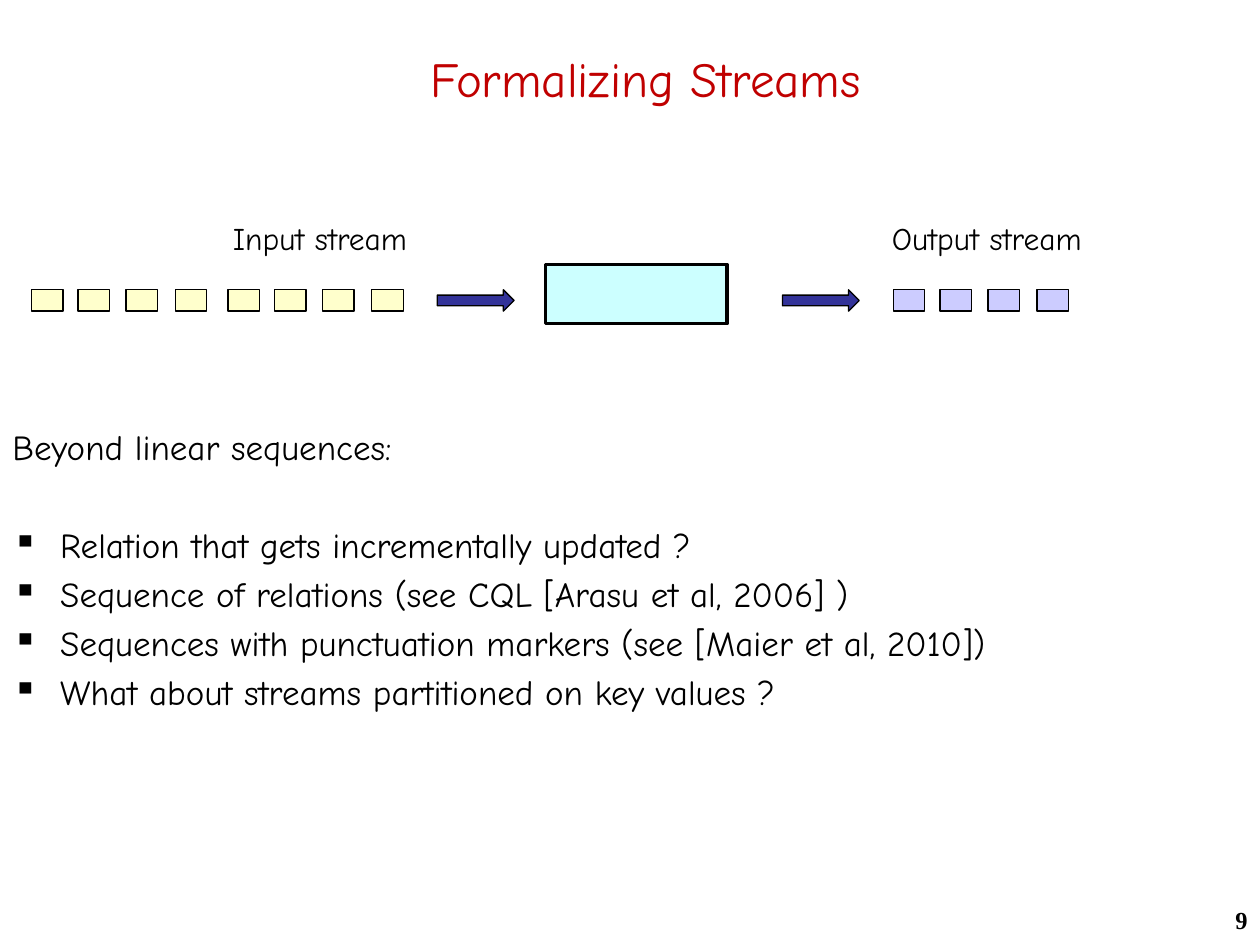
from lxml import etree
from pptx import Presentation
from pptx.dml.color import RGBColor
from pptx.enum.shapes import MSO_SHAPE
from pptx.enum.text import MSO_ANCHOR, PP_ALIGN
from pptx.oxml.ns import qn
from pptx.util import Inches, Pt

RECT = MSO_SHAPE.RECTANGLE
ARROW = MSO_SHAPE.RIGHT_ARROW
MIDDLE = MSO_ANCHOR.MIDDLE
LEFT, CENTER, RIGHT = PP_ALIGN.LEFT, PP_ALIGN.CENTER, PP_ALIGN.RIGHT

INTRO = "Beyond linear sequences:"
POINTS = [
    "Relation that gets incrementally updated ?",
    "Sequence of relations (see CQL [Arasu et al, 2006] )",
    "Sequences with punctuation markers (see [Maier et al, 2010])",
    "What about streams partitioned on key values ?",
]


def color(code):
    return RGBColor.from_string(code)


def bullet(para):
    """Give the paragraph a square bullet and a hanging indent."""
    props = para._p.get_or_add_pPr()
    props.set("marL", str(Inches(0.38)))
    props.set("indent", str(-Inches(0.38)))
    etree.SubElement(props, qn("a:buChar")).set("char", "▪")


class Page:
    font = "Comic Neue"
    ink = "000000"

    def __init__(self, slide):
        self.slide = slide

    def place(self, shape, box):
        shape.left, shape.top, shape.width, shape.height = map(Inches, box)

    def style(self, para, size, ink=None, font=None, bold=False, align=LEFT):
        para.alignment = align
        for run in para.runs:
            run.font.size = Pt(size)
            run.font.name = font or self.font
            run.font.bold = bold
            run.font.color.rgb = color(ink or self.ink)

    def title(self, text, box):
        shape = self.slide.shapes.title
        self.place(shape, box)
        frame = shape.text_frame
        frame.text = text
        frame.vertical_anchor = MIDDLE
        self.style(frame.paragraphs[0], 28, "C00000", align=CENTER)

    def shape(self, kind, box, fill, width=0.75):
        shape = self.slide.shapes.add_shape(kind, *map(Inches, box))
        shape.shadow.inherit = False
        shape.fill.solid()
        shape.fill.fore_color.rgb = color(fill)
        shape.line.color.rgb = color(self.ink)
        shape.line.width = Pt(width)

    def items(self, left, fill):
        """Draw one group of four stream items."""
        for step in (0, 0.37, 0.75, 1.14):
            self.shape(RECT, (left + step, 2.3, 0.25, 0.17), fill)

    def text(self, text, box, size, **look):
        frame = self.slide.shapes.add_textbox(*map(Inches, box)).text_frame
        frame.word_wrap = True
        frame.text = text
        self.style(frame.paragraphs[0], size, **look)
        return frame

    def points(self, intro, points, box):
        frame = self.text(intro, box, 20)
        frame.paragraphs[0].space_before = Pt(4)
        for i, point in enumerate(points):
            para = frame.add_paragraph()
            para.text = point
            self.style(para, 20)
            para.space_before = Pt(4 if i else 32)
            bullet(para)


def main():
    deck = Presentation()
    deck.slide_width, deck.slide_height = Inches(10), Inches(7.5)
    page = Page(deck.slides.add_slide(deck.slide_layouts[5]))

    page.title("Formalizing Streams", (0.25, 0.33, 9.75, 0.58))
    page.shape(RECT, (4.33, 2.1, 1.44, 0.47), "CCFFFF", 2)
    for left in (0.25, 1.81):
        page.items(left, "FFFFCC")
    page.items(7.09, "CCCCFF")
    for left in (3.47, 6.21):
        page.shape(ARROW, (left, 2.3, 0.61, 0.17), "333399")
    page.text("Input stream", (1.75, 1.69, 1.76, 0.4), 18)
    page.text("Output stream", (6.98, 1.69, 2.02, 0.4), 18)
    page.points(INTRO, POINTS, (0, 3.33, 10, 3.5))
    page.text("9", (9.5, 7.13, 0.5, 0.37), 14,
              font="Times New Roman", bold=True, align=RIGHT)
    deck.save("out.pptx")


if __name__ == "__main__":
    main()
